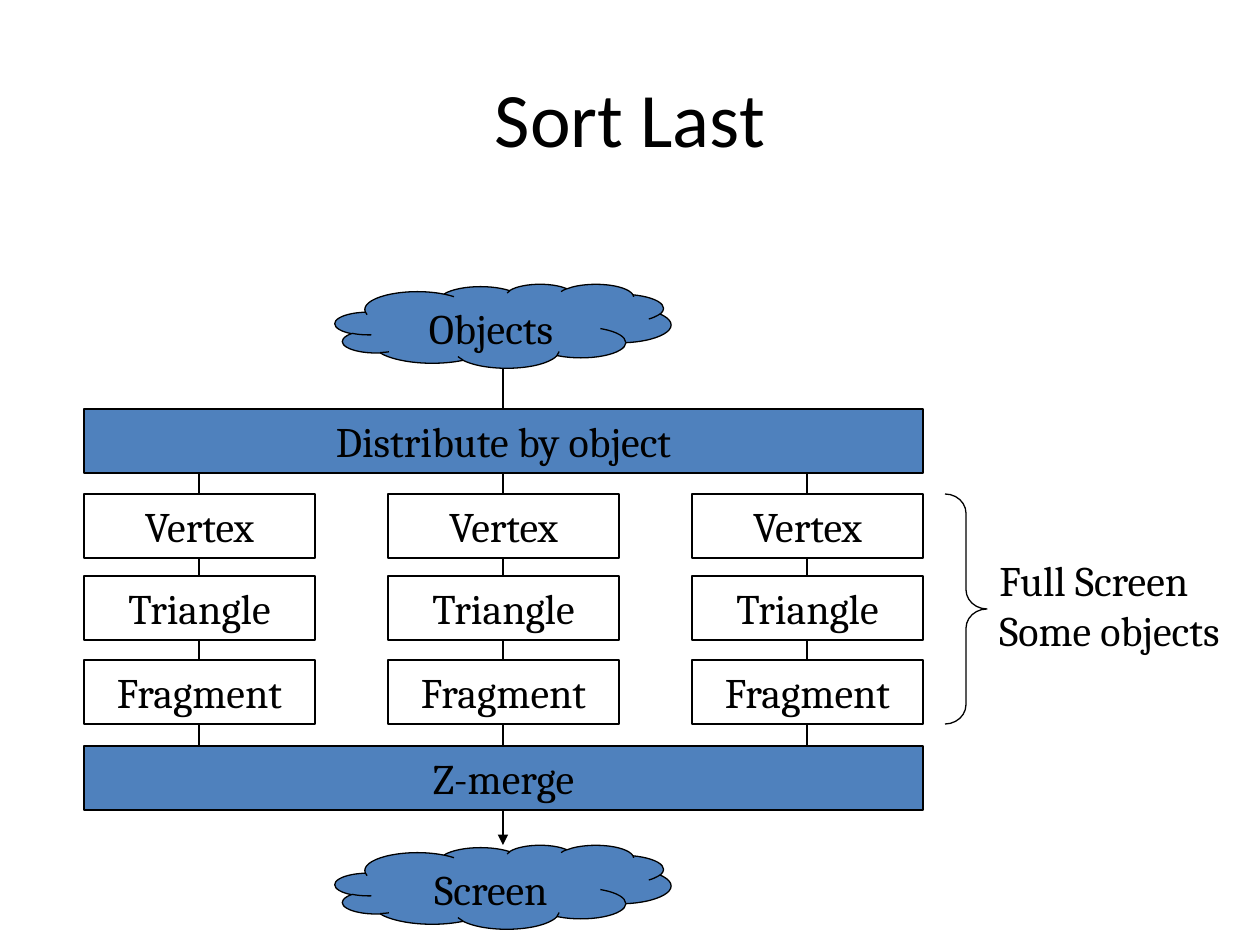
from dataclasses import dataclass

from lxml import etree
from pptx import Presentation
from pptx.dml.color import RGBColor
from pptx.enum.shapes import MSO_CONNECTOR, MSO_SHAPE
from pptx.enum.text import MSO_ANCHOR, MSO_AUTO_SIZE, PP_ALIGN
from pptx.oxml.ns import qn
from pptx.util import Pt

RECTANGLE, CLOUD, BRACE = MSO_SHAPE.RECTANGLE, MSO_SHAPE.CLOUD, MSO_SHAPE.RIGHT_BRACE
STRAIGHT = MSO_CONNECTOR.STRAIGHT
TOP, MIDDLE = MSO_ANCHOR.TOP, MSO_ANCHOR.MIDDLE
LEFT, CENTER = PP_ALIGN.LEFT, PP_ALIGN.CENTER
GROW = MSO_AUTO_SIZE.SHAPE_TO_FIT_TEXT
TITLE_ONLY = 5
EMU_PER_PX = 914400 / 126


@dataclass(frozen=True)
class Theme:
    ink: RGBColor = RGBColor(0x00, 0x00, 0x00)
    accent: RGBColor = RGBColor(0x4F, 0x81, 0xBD)
    title_font: str = "Calibri"
    body_font: str = "Cambria"
    title_size: int = 44
    body_size: int = 24
    line_width: float = 0.75


THEME = Theme()
STAGES = {"Vertex": 494, "Triangle": 576, "Fragment": 660}
DISTRIBUTE_TOP, MERGE_TOP = 409, 746
OBJECTS_TOP, SCREEN_TOP = 284, 845
BOX_WIDTH, BOX_HEIGHT = 231, 64
CLOUD_WIDTH, CLOUD_HEIGHT = 336, 84
PIPE_LEFT, PIPE_STEP, PIPE_COUNT = 84, 304, 3
BAR_WIDTH = PIPE_STEP * (PIPE_COUNT - 1) + BOX_WIDTH
MIDDLE_X = PIPE_LEFT + BAR_WIDTH // 2


def px(*lengths):
    return [round(length * EMU_PER_PX) for length in lengths]


def write(frame, lines, align=CENTER, anchor=MIDDLE,
          font=THEME.body_font, size=THEME.body_size):
    frame.vertical_anchor = anchor
    for index, line in enumerate(lines):
        para = frame.paragraphs[0] if index == 0 else frame.add_paragraph()
        para.alignment = align
        span = para.add_run()
        span.text = line
        span.font.name = font
        span.font.size = Pt(size)
        span.font.color.rgb = THEME.ink


def outline(shape):
    shape.line.color.rgb = THEME.ink
    shape.line.width = Pt(THEME.line_width)


def add_outlined(page, kind, bounds, fill=None):
    shape = page.shapes.add_shape(kind, *px(*bounds))
    shape.shadow.inherit = False
    outline(shape)
    if fill is None:
        shape.fill.background()
    else:
        shape.fill.solid()
        shape.fill.fore_color.rgb = fill
    return shape


def add_box(page, text, left, top, width=BOX_WIDTH, fill=None, anchor=MIDDLE):
    box = add_outlined(page, RECTANGLE, (left, top, width, BOX_HEIGHT), fill)
    write(box.text_frame, [text], anchor=anchor)
    box.text_frame.auto_size = GROW


def add_bar(page, text, top):
    add_box(page, text, PIPE_LEFT, top, BAR_WIDTH, THEME.accent, TOP)


def add_cloud(page, text, top):
    bounds = (MIDDLE_X - CLOUD_WIDTH // 2, top, CLOUD_WIDTH, CLOUD_HEIGHT)
    cloud = add_outlined(page, CLOUD, bounds, THEME.accent)
    write(cloud.text_frame, [text], anchor=TOP)


def add_link(page, x, start, end, arrow=False):
    link = page.shapes.add_connector(STRAIGHT, *px(x, start, x, end))
    outline(link)
    if arrow:
        line = link.line._get_or_add_ln()
        etree.SubElement(line, qn("a:tailEnd"), type="triangle")
    etree.SubElement(link._element.spPr, qn("a:effectLst"))


def add_pipeline(page, left):
    tops = [DISTRIBUTE_TOP, *STAGES.values(), MERGE_TOP]
    for upper, lower in zip(tops, tops[1:]):
        add_link(page, left + BOX_WIDTH // 2, upper + BOX_HEIGHT, lower)
    for name, top in STAGES.items():
        add_box(page, name, left, top)


def add_note(page, lines):
    top = STAGES["Vertex"]
    height = STAGES["Fragment"] + BOX_HEIGHT - top
    brace = add_outlined(page, BRACE, (945, top, 42, height))
    brace.adjustments[0] = 0.46
    brace.adjustments[1] = 0.5
    label = page.shapes.add_textbox(*px(987, 548, 251, 113))
    write(label.text_frame, lines, LEFT, TOP)
    label.text_frame.word_wrap = False
    label.text_frame.auto_size = GROW


def add_title(page, text):
    title = page.shapes.title
    title.left, title.top, title.width, title.height = px(63, 38, 1134, 158)
    write(title.text_frame, [text], font=THEME.title_font, size=THEME.title_size)


def main():
    deck = Presentation()
    deck.slide_width, deck.slide_height = px(1260, 945)
    page = deck.slides.add_slide(deck.slide_layouts[TITLE_ONLY])
    add_title(page, "Sort Last")
    add_link(page, MIDDLE_X, OBJECTS_TOP + CLOUD_HEIGHT, DISTRIBUTE_TOP)
    add_link(page, MIDDLE_X, MERGE_TOP + BOX_HEIGHT, SCREEN_TOP, arrow=True)
    add_bar(page, "Distribute by object", DISTRIBUTE_TOP)
    add_bar(page, "Z-merge", MERGE_TOP)
    for column in range(PIPE_COUNT):
        add_pipeline(page, PIPE_LEFT + column * PIPE_STEP)
    add_note(page, ["Full Screen", "Some objects"])
    add_cloud(page, "Objects", OBJECTS_TOP)
    add_cloud(page, "Screen", SCREEN_TOP)
    deck.save("out.pptx")


if __name__ == "__main__":
    main()
